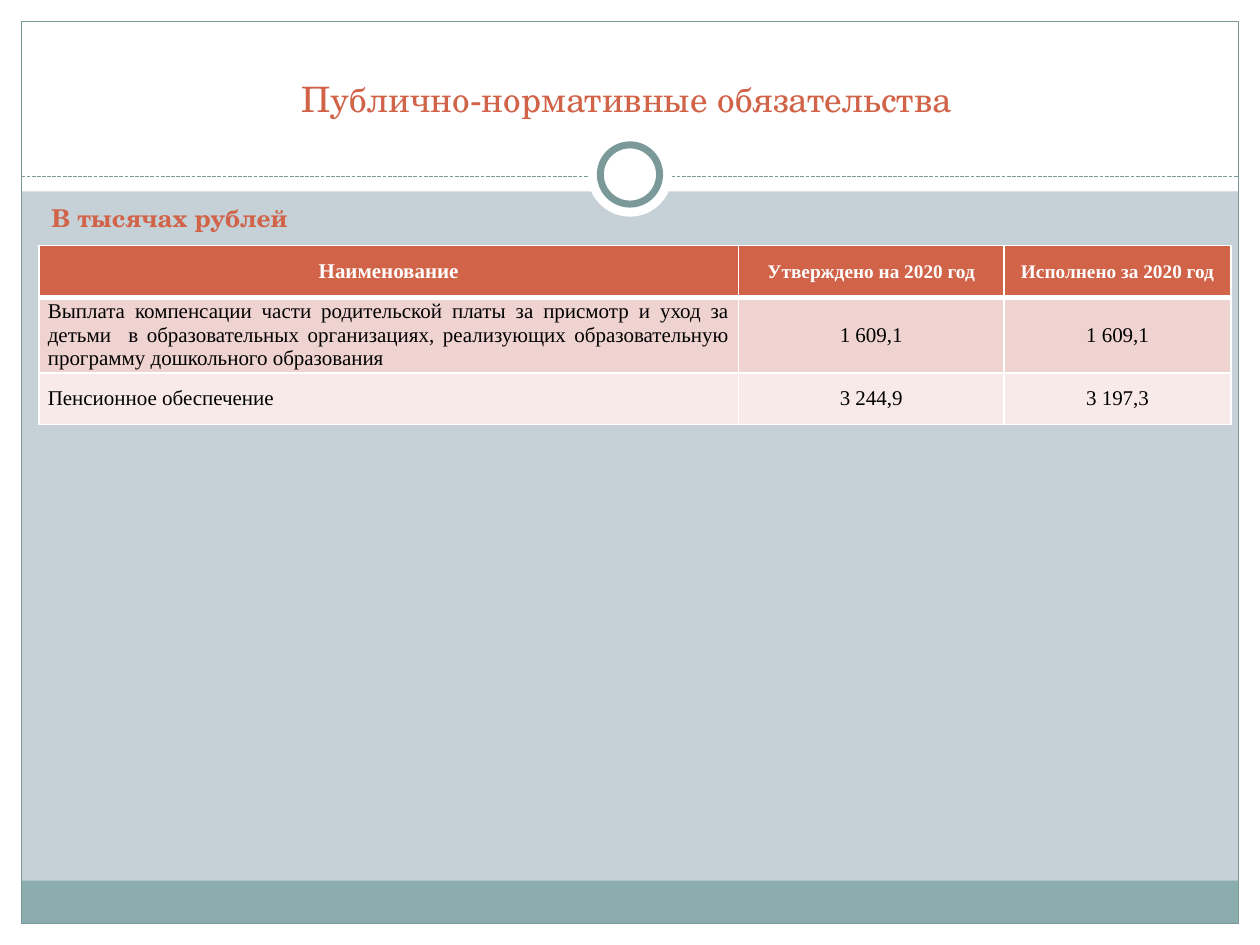
from dataclasses import dataclass

from lxml import etree
from pptx import Presentation
from pptx.dml.color import RGBColor
from pptx.enum.dml import MSO_LINE
from pptx.enum.shapes import MSO_CONNECTOR, MSO_SHAPE
from pptx.enum.text import MSO_ANCHOR, MSO_AUTO_SIZE, PP_ALIGN
from pptx.oxml.ns import qn
from pptx.util import Inches, Pt

RECTANGLE, OVAL = MSO_SHAPE.RECTANGLE, MSO_SHAPE.OVAL
STRAIGHT, DASHED = MSO_CONNECTOR.STRAIGHT, MSO_LINE.SQUARE_DOT
LEFT, CENTER, JUSTIFY = PP_ALIGN.LEFT, PP_ALIGN.CENTER, PP_ALIGN.JUSTIFY
TOP, MIDDLE, BOTTOM = MSO_ANCHOR.TOP, MSO_ANCHOR.MIDDLE, MSO_ANCHOR.BOTTOM
NO_AUTOFIT = MSO_AUTO_SIZE.NONE


@dataclass(frozen=True)
class Theme:
    background: str = "C5D1D7"
    white: str = "FFFFFF"
    black: str = "000000"
    accent: str = "D16349"
    footer: str = "8CADAE"
    outline: str = "7C999A"
    bands: tuple = ("EED3D0", "F7EAE9")
    heading_font: str = "TeX Gyre Schola"
    table_font: str = "Times New Roman"
    title_size: int = 20
    unit_size: int = 14
    table_size: int = 12
    small_size: int = 11


THEME = Theme()
WIDTH, HEIGHT, MARGIN = 10, 7.5, 0.17
HEADER_HEIGHT = 1.52
COLUMN_WIDTHS = (5.55, 2.11, 1.8)
ROW_HEIGHTS = (0.41, 0.55, 0.41)
ROWS = (
    ("Наименование", "Утверждено на 2020 год", "Исполнено за 2020 год"),
    ("Выплата компенсации части родительской платы за присмотр и уход за детьми  "
     "в образовательных организациях, реализующих образовательную программу "
     "дошкольного образования", "1 609,1", "1 609,1"),
    ("Пенсионное обеспечение", "3 244,9", "3 197,3"),
)


def color(value):
    return RGBColor.from_string(value)


def write_text(frame, text, *, size, fill, font=THEME.heading_font, bold=False,
               align=LEFT, anchor=TOP):
    frame.word_wrap = True
    frame.vertical_anchor = anchor
    paragraph = frame.paragraphs[0]
    paragraph.alignment = align
    run = paragraph.add_run()
    run.text = text
    run.font.name = font
    run.font.size = Pt(size)
    run.font.bold = bold
    run.font.color.rgb = color(fill)


def add_shape(slide, kind, box, fill=None, line=None, line_width=0.75):
    shape = slide.shapes.add_shape(kind, *map(Inches, box))
    shape.shadow.inherit = False
    if fill:
        shape.fill.solid()
        shape.fill.fore_color.rgb = color(fill)
    else:
        shape.fill.background()
    if line:
        shape.line.color.rgb = color(line)
        shape.line.width = Pt(line_width)
    else:
        shape.line.fill.background()


def add_frame(slide, box):
    left, top, width, height = box
    inner = (left + MARGIN, top + MARGIN, width - 2 * MARGIN, height - 2 * MARGIN)
    bottom = top + height - MARGIN
    for band in (
        (left, bottom, width, MARGIN),
        (left, top, width, HEADER_HEIGHT),
        (left, top, MARGIN, height),
        (left + width - MARGIN, top, MARGIN, height),
    ):
        add_shape(slide, RECTANGLE, band, THEME.white)
    add_shape(slide, RECTANGLE, (inner[0], bottom - 0.34, inner[2], 0.34), THEME.footer)
    add_shape(slide, RECTANGLE, inner, line=THEME.outline)


def add_divider(slide, box):
    left, top, width, height = box
    line_y = top + 0.35
    divider = slide.shapes.add_connector(
        STRAIGHT, Inches(left), Inches(line_y), Inches(left + width), Inches(line_y))
    divider.line.color.rgb = color(THEME.outline)
    divider.line.width = Pt(0.75)
    divider.line.dash_style = DASHED
    etree.SubElement(divider.element.spPr, qn("a:effectLst"))
    for diameter, outline in ((height, None), (height - 0.2, THEME.outline)):
        circle = (left + (width - diameter) / 2, top + (height - diameter) / 2,
                  diameter, diameter)
        add_shape(slide, OVAL, circle, THEME.white, outline, line_width=4)


def add_title(slide, box):
    title = slide.shapes.title
    title.left, title.top, title.width, title.height = map(Inches, box)
    title.text_frame.auto_size = NO_AUTOFIT
    write_text(title.text_frame, "Публично-нормативные обязательства",
               size=THEME.title_size, fill=THEME.accent, align=CENTER, anchor=BOTTOM)
    title.element.getparent().append(title.element)


def add_unit_label(slide, box):
    label = slide.shapes.add_textbox(*map(Inches, box))
    write_text(label.text_frame, "В тысячах рублей", size=THEME.unit_size,
               fill=THEME.accent, bold=True)


def set_borders(cell, row):
    properties = cell._tc.get_or_add_tcPr()
    widths = {"L": 1, "R": 1, "T": 3 if row == 1 else 1, "B": 3 if row == 0 else 1}
    for side, width in widths.items():
        border = etree.SubElement(properties, qn(f"a:ln{side}"), w=str(Pt(width)))
        fill = etree.SubElement(border, qn("a:solidFill"))
        etree.SubElement(fill, qn("a:srgbClr"), val=THEME.white)


def format_cell(cell, text, row, column):
    header = row == 0
    set_borders(cell, row)
    cell.fill.solid()
    cell.fill.fore_color.rgb = color(THEME.accent if header else THEME.bands[row - 1])
    cell.margin_left = cell.margin_right = Inches(0.07)
    cell.margin_top = cell.margin_bottom = 0
    cell.vertical_anchor = MIDDLE
    write_text(cell.text_frame, text, font=THEME.table_font, bold=header,
               size=THEME.small_size if header and column else THEME.table_size,
               fill=THEME.white if header else THEME.black,
               align=CENTER if header or column else JUSTIFY, anchor=MIDDLE)


def add_obligations_table(slide, box):
    table = slide.shapes.add_table(
        len(ROWS), len(COLUMN_WIDTHS), *map(Inches, box)).table
    for column, width in zip(table.columns, COLUMN_WIDTHS):
        column.width = Inches(width)
    for row, height in zip(table.rows, ROW_HEIGHTS):
        row.height = Inches(height)
    for row, texts in enumerate(ROWS):
        for column, text in enumerate(texts):
            format_cell(table.cell(row, column), text, row, column)


def main():
    presentation = Presentation()
    presentation.slide_width = Inches(WIDTH)
    presentation.slide_height = Inches(HEIGHT)
    slide = presentation.slides.add_slide(presentation.slide_layouts[5])
    slide.background.fill.solid()
    slide.background.fill.fore_color.rgb = color(THEME.background)
    add_frame(slide, (0, 0, WIDTH, HEIGHT))
    add_divider(slide, (MARGIN, 1.05, WIDTH - 2 * MARGIN, 0.67))
    add_title(slide, (0.31, 0.47, 9.33, 0.53))
    add_unit_label(slide, (0.31, 1.56, 2.27, 0.47))
    add_obligations_table(slide, (0.31, 1.95, sum(COLUMN_WIDTHS), sum(ROW_HEIGHTS)))
    presentation.save("out.pptx")


if __name__ == "__main__":
    main()
